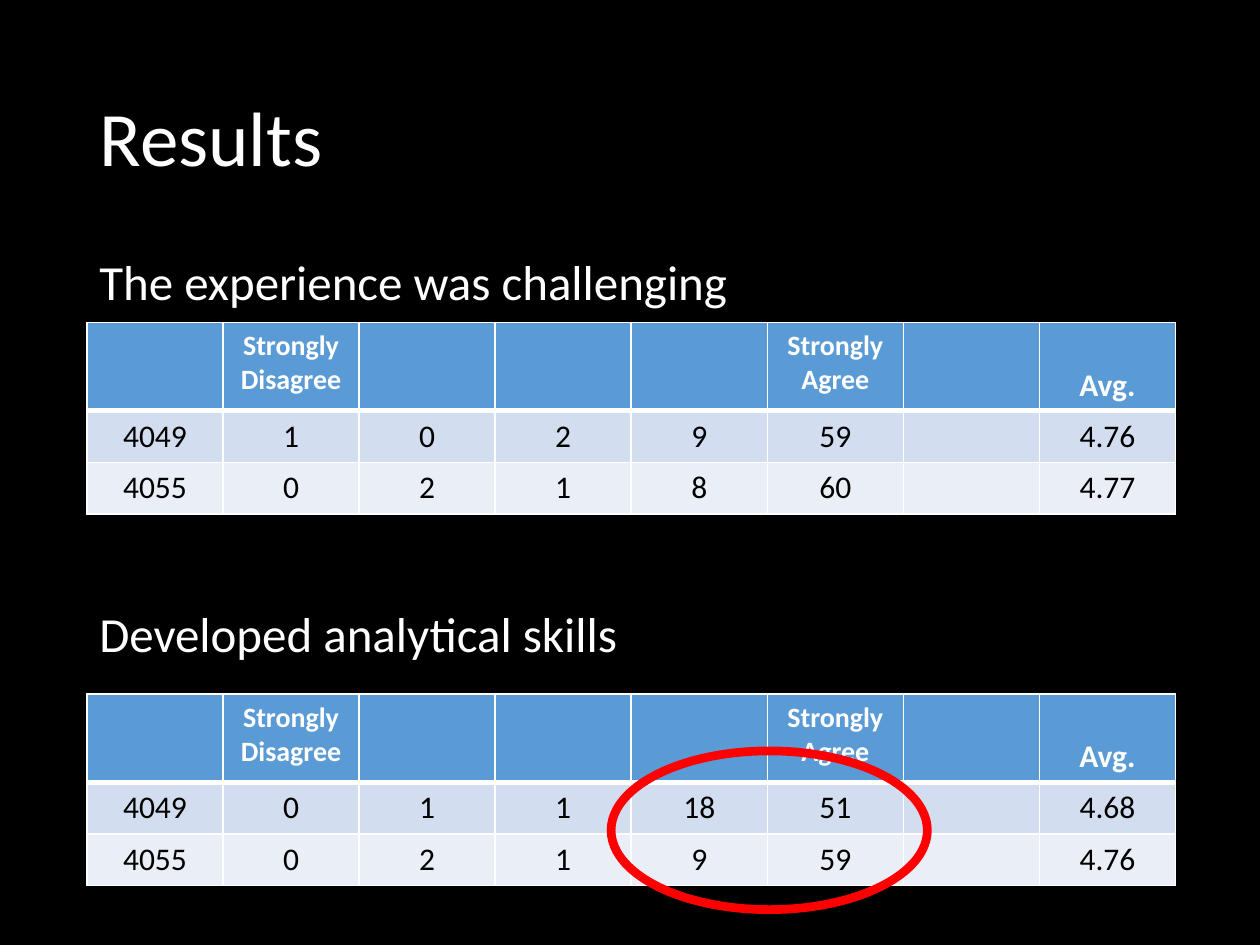
from dataclasses import dataclass

from lxml import etree
from pptx import Presentation
from pptx import util as u
from pptx.dml.color import RGBColor
from pptx.enum import shapes, text
from pptx.oxml import ns
from pptx.slide import Slide
from pptx.table import _Cell
from pptx.text.text import TextFrame

BLACK = RGBColor(0x00, 0x00, 0x00)
WHITE = RGBColor(0xFF, 0xFF, 0xFF)
RED = RGBColor(0xFF, 0x00, 0x00)
HEADER_BLUE = RGBColor(0x5B, 0x9B, 0xD5)
BAND_COLORS = (RGBColor(0xD2, 0xDE, 0xEF), RGBColor(0xEA, 0xEF, 0xF7))
FONT = "Calibri"

LEFT = u.Inches(0.69)
TEXT_WIDTH = u.Inches(8.62)
COLUMN_WIDTH = u.Inches(1.08)
HEADER_HEIGHT = u.Inches(0.7)
ROW_HEIGHT = u.Inches(0.41)
HEADERS = ("", "Strongly Disagree", "", "", "", "Strongly Agree", "", "Avg.")


@dataclass(frozen=True)
class Survey:
    question: str
    question_top: float
    table_top: float
    rows: tuple[tuple[str, ...], ...]


SURVEYS = (
    Survey("The experience was challenging", 2.0, 2.56, (
        ("4049", "1", "0", "2", "9", "59", "", "4.76"),
        ("4055", "0", "2", "1", "8", "60", "", "4.77"),
    )),
    Survey("Developed analytical skills", 4.79, 5.51, (
        ("4049", "0", "1", "1", "18", "51", "", "4.68"),
        ("4055", "0", "2", "1", "9", "59", "", "4.76"),
    )),
)


def format_text(frame: TextFrame, size: int, color: RGBColor, bold: bool = False) -> None:
    for paragraph in frame.paragraphs:
        for run in paragraph.runs:
            run.font.name = FONT
            run.font.size = u.Pt(size)
            run.font.bold = bold
            run.font.color.rgb = color


def add_title(slide: Slide, title: str) -> None:
    shape = slide.shapes.title
    shape.left, shape.top = LEFT, u.Inches(0.4)
    shape.width, shape.height = TEXT_WIDTH, u.Inches(1.45)
    frame = shape.text_frame
    frame.text = title
    frame.vertical_anchor = text.MSO_ANCHOR.MIDDLE
    frame.paragraphs[0].alignment = text.PP_ALIGN.LEFT
    frame.paragraphs[0].line_spacing = 0.9
    format_text(frame, 44, WHITE)


def add_question(slide: Slide, question: str, top: float) -> None:
    shape = slide.shapes.add_textbox(LEFT, u.Inches(top), TEXT_WIDTH, u.Inches(0.53))
    frame = shape.text_frame
    frame.word_wrap = True
    frame.text = question
    frame.paragraphs[0].line_spacing = 0.9
    format_text(frame, 28, WHITE)


def set_borders(cell: _Cell, top: int, bottom: int) -> None:
    properties = cell._tc.get_or_add_tcPr()
    widths = {"lnL": 1, "lnR": 1, "lnT": top, "lnB": bottom}
    for index, (side, width) in enumerate(widths.items()):
        line = etree.Element(ns.qn(f"a:{side}"), w=str(u.Pt(width)))
        fill = etree.SubElement(line, ns.qn("a:solidFill"))
        etree.SubElement(fill, ns.qn("a:srgbClr"), val=str(WHITE))
        properties.insert(index, line)


def add_results_table(slide: Slide, survey: Survey) -> None:
    values = (HEADERS, *survey.rows)
    height = HEADER_HEIGHT + ROW_HEIGHT * len(survey.rows)
    table = slide.shapes.add_table(
        len(values), len(HEADERS), LEFT, u.Inches(survey.table_top),
        COLUMN_WIDTH * len(HEADERS), height,
    ).table
    for column in table.columns:
        column.width = COLUMN_WIDTH
    for row_index, row in enumerate(values):
        is_header = row_index == 0
        table.rows[row_index].height = HEADER_HEIGHT if is_header else ROW_HEIGHT
        for column_index, value in enumerate(row):
            cell = table.cell(row_index, column_index)
            cell.fill.solid()
            cell.fill.fore_color.rgb = HEADER_BLUE if is_header else BAND_COLORS[row_index - 1]
            set_borders(cell, 3 if row_index == 1 else 1, 3 if is_header else 1)
            cell.text_frame.text = value
            cell.text_frame.paragraphs[0].alignment = text.PP_ALIGN.CENTER
            is_average = column_index == len(HEADERS) - 1
            if is_header and is_average:
                cell.vertical_anchor = text.MSO_ANCHOR.BOTTOM
            size = 16 if is_header and not is_average else 18
            format_text(cell.text_frame, size, WHITE if is_header else BLACK, is_header)


def add_highlight(slide: Slide) -> None:
    ellipse = slide.shapes.add_shape(
        shapes.MSO_SHAPE.OVAL, u.Inches(4.85), u.Inches(5.96), u.Inches(2.51), u.Inches(1.26)
    )
    ellipse.shadow.inherit = False
    ellipse.fill.background()
    ellipse.line.color.rgb = RED
    ellipse.line.width = u.Pt(5)


def main() -> None:
    presentation = Presentation()
    presentation.slide_width = u.Inches(10)
    presentation.slide_height = u.Inches(7.5)
    slide = presentation.slides.add_slide(presentation.slide_layouts.get_by_name("Title Only"))
    slide.background.fill.solid()
    slide.background.fill.fore_color.rgb = BLACK
    add_title(slide, "Results")
    for survey in SURVEYS:
        add_question(slide, survey.question, survey.question_top)
        add_results_table(slide, survey)
    add_highlight(slide)
    presentation.save("out.pptx")


if __name__ == "__main__":
    main()
